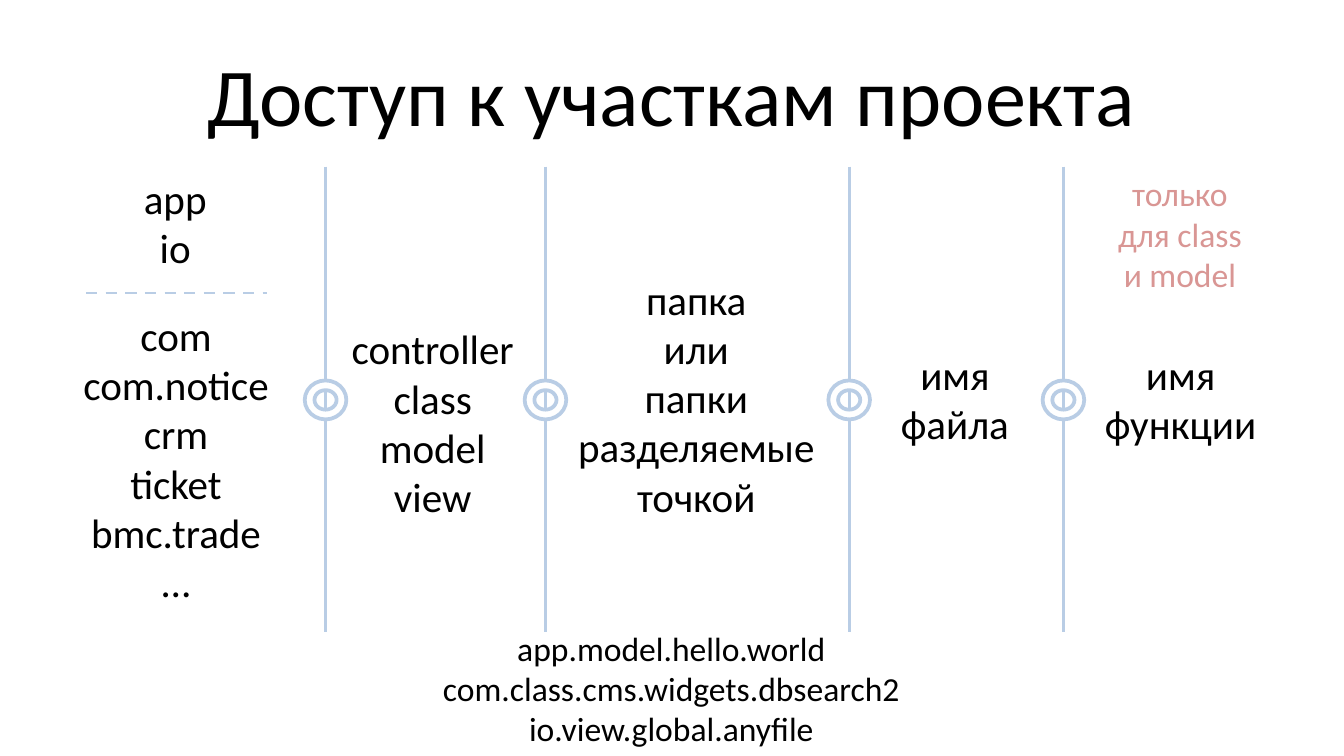
from dataclasses import dataclass

from lxml import etree
from pptx import Presentation
from pptx.dml.color import RGBColor
from pptx.enum.dml import MSO_LINE
from pptx.enum.shapes import MSO_CONNECTOR, MSO_SHAPE
from pptx.enum.text import MSO_ANCHOR, MSO_AUTO_SIZE, PP_ALIGN
from pptx.oxml.ns import qn
from pptx.slide import Slide
from pptx.text.text import TextFrame
from pptx.util import Pt

STRAIGHT = MSO_CONNECTOR.STRAIGHT
DONUT = MSO_SHAPE.DONUT
DASH = MSO_LINE.DASH
CENTER = PP_ALIGN.CENTER
MIDDLE = MSO_ANCHOR.MIDDLE
GROW = MSO_AUTO_SIZE.SHAPE_TO_FIT_TEXT
FIXED = MSO_AUTO_SIZE.NONE

FONT = "Calibri"
COLORS = {"text": "000000", "note": "D99694", "divider": "B9CDE5", "white": "FFFFFF"}
TITLE_ONLY = 5
DIVIDER_TOP, DIVIDER_BOTTOM = 89.3, 338.4
RING_WIDTH, RING_HEIGHT, RING_TOP = 22.3, 20.9, 203.8


@dataclass
class Label:
    left: float
    top: float
    width: float
    height: float
    lines: list[str]
    size: int = 22
    color: str = "text"
    wrap: bool = False


DIVIDERS = [174.4, 292.2, 454.9, 569.7]
LABELS = [
    Label(69.8, 89.3, 48.2, 60.5, ["app", "io"]),
    Label(36.7, 162.7, 115.2, 167, ["com", "com.notice", "crm", "ticket", "bmc.trade", "…"]),
    Label(180.7, 169.9, 102.2, 113.8, ["controller", "class", "model", "view"]),
    Label(301.7, 143.3, 142.6, 140.4, ["папка", "или", "папки", "разделяемые", "точкой"]),
    Label(471.6, 183.6, 79.9, 60.5, ["имя файла"], wrap=True),
    Label(581, 183.6, 103, 60.5, ["имя функции"], wrap=True),
    Label(586.8, 89.3, 90.7, 72.7, ["только для class и model"], 18, "note", True),
    Label(203.8, 332.6, 311.8, 72.7,
          ["app.model.hello.world", "com.class.cms.widgets.dbsearch2", "io.view.global.anyfile"],
          18, wrap=True),
]


def rgb(name: str) -> RGBColor:
    return RGBColor.from_string(COLORS[name])


def format_text(frame: TextFrame, size: int, color: str) -> None:
    for paragraph in frame.paragraphs:
        paragraph.alignment = CENTER
        for run in paragraph.runs:
            run.font.name = FONT
            run.font.size = Pt(size)
            run.font.color.rgb = rgb(color)


def add_title(slide: Slide, text: str) -> None:
    title = slide.shapes.title
    title.left, title.top, title.width, title.height = Pt(36), Pt(16.2), Pt(648), Pt(67.5)
    frame = title.text_frame
    frame.text = text
    frame.auto_size = FIXED
    frame.vertical_anchor = MIDDLE
    format_text(frame, 44, "text")


def add_label(slide: Slide, label: Label) -> None:
    box = slide.shapes.add_textbox(
        Pt(label.left), Pt(label.top), Pt(label.width), Pt(label.height))
    frame = box.text_frame
    frame.text = "\n".join(label.lines)
    frame.word_wrap = label.wrap
    frame.auto_size = GROW
    format_text(frame, label.size, label.color)


def add_line(slide: Slide, x1: float, y1: float, x2: float, y2: float,
             dashed: bool = False) -> None:
    line = slide.shapes.add_connector(STRAIGHT, Pt(x1), Pt(y1), Pt(x2), Pt(y2))
    line.line.color.rgb = rgb("divider")
    line.line.width = Pt(1.5)
    if dashed:
        line.line.dash_style = DASH
    etree.SubElement(line._element.spPr, qn("a:effectLst"))


def add_divider(slide: Slide, x: float) -> None:
    add_line(slide, x, DIVIDER_TOP, x, DIVIDER_BOTTOM)
    ring = slide.shapes.add_shape(
        DONUT, Pt(x - RING_WIDTH / 2), Pt(RING_TOP), Pt(RING_WIDTH), Pt(RING_HEIGHT))
    ring.shadow.inherit = False
    ring.fill.solid()
    ring.fill.fore_color.rgb = rgb("white")
    ring.line.color.rgb = rgb("divider")
    ring.line.width = Pt(2)


def main() -> None:
    deck = Presentation()
    deck.slide_width, deck.slide_height = Pt(720), Pt(405)
    slide = deck.slides.add_slide(deck.slide_layouts[TITLE_ONLY])
    add_title(slide, "Доступ к участкам проекта")
    for x in DIVIDERS:
        add_divider(slide, x)
    add_line(slide, 46.1, 157, 143.3, 157, dashed=True)
    for label in LABELS:
        add_label(slide, label)
    deck.save("out.pptx")


if __name__ == "__main__":
    main()
